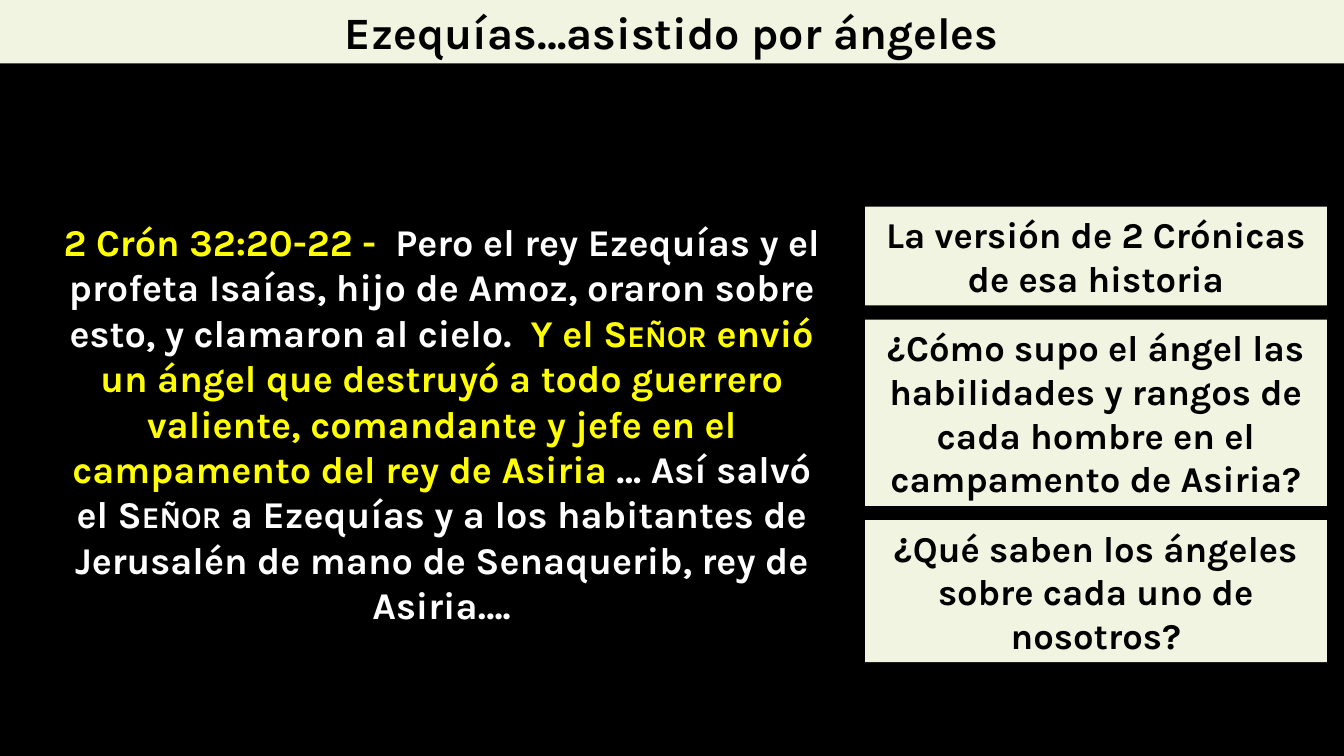
from pptx import Presentation
from pptx.dml.color import RGBColor
from pptx.enum.shapes import MSO_SHAPE
from pptx.enum.text import MSO_ANCHOR, MSO_AUTO_SIZE, PP_ALIGN
from pptx.util import Inches, Pt

RECTANGLE = MSO_SHAPE.RECTANGLE
CENTER = PP_ALIGN.CENTER
MIDDLE = MSO_ANCHOR.MIDDLE
TOP = MSO_ANCHOR.TOP
GROW = MSO_AUTO_SIZE.SHAPE_TO_FIT_TEXT

BLACK = RGBColor(0x00, 0x00, 0x00)
WHITE = RGBColor(0xFF, 0xFF, 0xFF)
YELLOW = RGBColor(0xFF, 0xFF, 0x00)
CREAM = RGBColor(0xF1, 0xF4, 0xE0)

PAGE_WIDTH, PAGE_HEIGHT = 13.33, 7.5
PANEL_LEFT, PANEL_TOP, PANEL_WIDTH, PANEL_GAP = 8.58, 2.05, 4.58, 0.14

PASSAGE = [
    ("2 Crón 32:20-22 -  ", YELLOW, False),
    ("Pero el rey Ezequías y el profeta Isaías, hijo de Amoz, oraron sobre "
     "esto, y clamaron al cielo.  ", WHITE, False),
    ("Y el ", YELLOW, False),
    ("Señor", YELLOW, True),
    (" envió un ángel que destruyó a todo guerrero valiente, comandante y "
     "jefe en el campamento del rey de Asiria ", YELLOW, False),
    ("… Así salvó el ", WHITE, False),
    ("Señor", WHITE, True),
    (" a Ezequías y a los habitantes de Jerusalén de mano de Senaquerib, "
     "rey de Asiria….", WHITE, False),
]

PANELS = [
    ("La versión de 2 Crónicas de esa historia", 0.98),
    ("¿Cómo supo el ángel las habilidades y rangos de cada hombre en el "
     "campamento de Asiria?", 1.85),
    ("¿Qué saben los ángeles sobre cada uno de nosotros?", 1.41),
]


class SlideBuilder:
    font_name = "Karla"

    def __init__(self, page):
        self.page = page

    def background(self, color):
        fill = self.page.background.fill
        fill.solid()
        fill.fore_color.rgb = color

    def add_spans(self, box, spans, size, anchor):
        frame = box.text_frame
        frame.word_wrap = True
        frame.auto_size = GROW
        frame.vertical_anchor = anchor
        para = frame.paragraphs[0]
        para.alignment = CENTER
        for text, color, small_caps in spans:
            span = para.add_run()
            span.text = text
            span.font.name = self.font_name
            span.font.size = Pt(size)
            span.font.bold = True
            span.font.color.rgb = color
            if small_caps:
                span._r.get_or_add_rPr().set("cap", "small")

    def panel(self, left, top, width, height, text, size):
        box = self.page.shapes.add_shape(
            RECTANGLE, Inches(left), Inches(top), Inches(width), Inches(height))
        box.shadow.inherit = False
        box.fill.solid()
        box.fill.fore_color.rgb = CREAM
        box.line.fill.background()
        self.add_spans(box, [(text, BLACK, False)], size, MIDDLE)

    def text(self, left, top, width, height, spans, size):
        box = self.page.shapes.add_textbox(
            Inches(left), Inches(top), Inches(width), Inches(height))
        self.add_spans(box, spans, size, TOP)


def main():
    deck = Presentation()
    deck.slide_width = Inches(PAGE_WIDTH)
    deck.slide_height = Inches(PAGE_HEIGHT)
    builder = SlideBuilder(deck.slides.add_slide(deck.slide_layouts[6]))

    builder.background(BLACK)
    builder.panel(0, 0, PAGE_WIDTH, 0.63, "Ezequías…asistido por ángeles", 32)
    builder.text(0.42, 2.12, 7.92, 4.19, PASSAGE, 27)

    top = PANEL_TOP
    for text, height in PANELS:
        builder.panel(PANEL_LEFT, top, PANEL_WIDTH, height, text, 26)
        top += height + PANEL_GAP

    deck.save("out.pptx")


if __name__ == "__main__":
    main()
